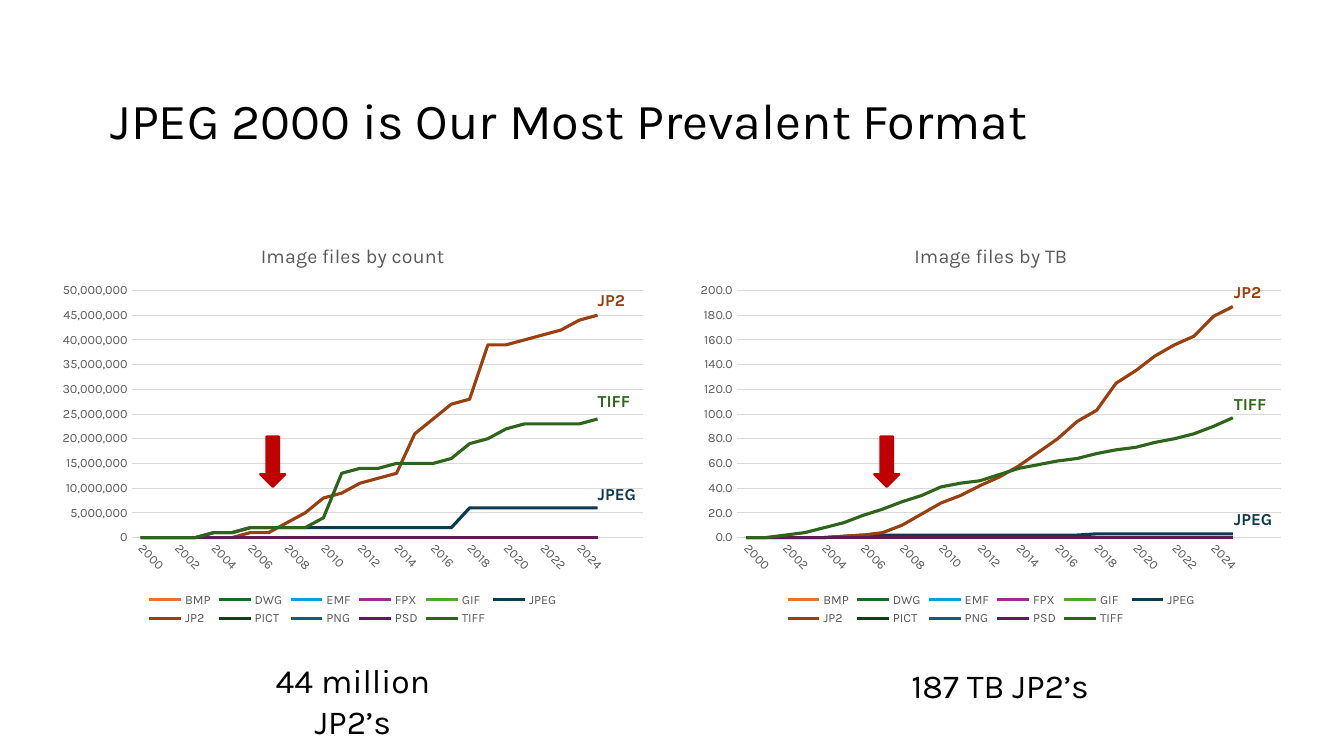
from lxml import etree
from pptx import Presentation
from pptx import util as u
from pptx.chart.data import CategoryChartData
from pptx.dml.color import RGBColor
from pptx.enum import chart as ch, shapes, text
from pptx.oxml.ns import qn

FONT = "Karla"
BLACK = RGBColor(0, 0, 0)
GRAY = RGBColor(0x59, 0x59, 0x59)
GRID = RGBColor(0xD9, 0xD9, 0xD9)
RED = RGBColor(0xC0, 0, 0)
COLORS = {
    "BMP": RGBColor(0xE9, 0x71, 0x32),
    "DWG": RGBColor(0x19, 0x6B, 0x24),
    "EMF": RGBColor(0x0F, 0x9E, 0xD5),
    "FPX": RGBColor(0xA0, 0x2B, 0x93),
    "GIF": RGBColor(0x4E, 0xA7, 0x2E),
    "JPEG": RGBColor(0x0D, 0x3A, 0x4E),
    "JP2": RGBColor(0x99, 0x40, 0x10),
    "PICT": RGBColor(0x0F, 0x40, 0x16),
    "PNG": RGBColor(0x09, 0x5F, 0x80),
    "PSD": RGBColor(0x60, 0x1A, 0x58),
    "TIFF": RGBColor(0x2F, 0x64, 0x1C),
}
YEARS = [str(year) for year in range(2000, 2026)]
MILLIONS = {
    "JPEG": [0] * 4 + [1] * 2 + [2] * 12 + [6] * 8,
    "JP2": [0, 0, 0, 0, 0, 0, 1, 1, 3, 5, 8, 9, 11, 12, 13, 21, 24, 27, 28,
            39, 39, 40, 41, 42, 44, 45],
    "TIFF": [0, 0, 0, 0, 1, 1, 2, 2, 2, 2, 4, 13, 14, 14, 15, 15, 15, 16, 19,
             20, 22, 23, 23, 23, 23, 24],
}
TERABYTES = {
    "JPEG": [0] * 5 + [1] + [2] * 12 + [3] * 8,
    "JP2": [0, 0, 0, 0, 0, 1, 2, 4, 10, 19, 28, 34, 42, 49, 58, 69, 80, 94,
            103, 125, 135, 147, 156, 163, 179, 187],
    "TIFF": [0, 0, 2, 4, 8, 12, 18, 23, 29, 34, 41, 44, 46, 51, 56, 59, 62,
             64, 68, 71, 73, 77, 80, 84, 90, 97],
}
CHARTS = [
    (0.5, "Image files by count", MILLIONS, 1000000, "#,##0", 50000000, 5000000),
    (6.83, "Image files by TB", TERABYTES, 1, "#,##0.0", 200, 20),
]

prs = Presentation()
prs.slide_width, prs.slide_height = u.Inches(13.33), u.Inches(7.5)
s = prs.slides.add_slide(prs.slide_layouts[6])


def style_font(font, size, color, bold=False):
    font.name, font.size, font.bold = FONT, u.Pt(size), bold
    font.color.rgb = color


def add_text(x, y, w, h, words, size, color, bold=False, align=None):
    tf = s.shapes.add_textbox(*map(u.Inches, (x, y, w, h))).text_frame
    tf.word_wrap = True
    tf.auto_size = text.MSO_AUTO_SIZE.SHAPE_TO_FIT_TEXT
    tf.text = words
    p = tf.paragraphs[0]
    p.alignment = align
    style_font(p.runs[0].font, size, color, bold)
    return p


for left, title, totals, unit, fmt, top_value, step in CHARTS:
    data = CategoryChartData(number_format=fmt)
    data.categories = YEARS + ["", ""]
    for name in COLORS:
        values = totals.get(name, [0] * len(YEARS))
        data.add_series(name, [v * unit for v in values] + [None, None])
    chart = s.shapes.add_chart(ch.XL_CHART_TYPE.LINE, u.Inches(left), u.Inches(2.25),
                               u.Inches(6), u.Inches(4), data).chart
    style_font(chart.font, 10, BLACK)
    chart.has_title = True
    chart.chart_title.text_frame.text = title
    chart.chart_title.include_in_layout = False
    style_font(chart.chart_title.text_frame.paragraphs[0].runs[0].font, 14, GRAY)
    chart.has_legend = True
    chart.legend.position = ch.XL_LEGEND_POSITION.BOTTOM
    chart.legend.include_in_layout = False
    style_font(chart.legend.font, 9, GRAY)
    chart.plots[0].vary_by_categories = False
    for series in chart.plots[0].series:
        series.smooth = False
        series.marker.style = ch.XL_MARKER_STYLE.NONE
        series.format.line.color.rgb = COLORS[series.name]
        series.format.line.width = u.Pt(2.25)

    years, amounts = chart.category_axis, chart.value_axis
    for axis in (years, amounts):
        axis.major_tick_mark = axis.minor_tick_mark = ch.XL_TICK_MARK.NONE
        style_font(axis.tick_labels.font, 9, GRAY)
    years.format.line.color.rgb = GRID
    years.format.line.width = u.Pt(0.75)
    years._element.find(qn("c:txPr")).find(qn("a:bodyPr")).set("rot", "2700000")
    skip = etree.Element(qn("c:tickLblSkip"), val="2")
    years._element.find(qn("c:noMultiLvlLbl")).addprevious(skip)
    amounts.minimum_scale, amounts.maximum_scale = 0, top_value
    amounts.major_unit = step
    amounts.format.line.fill.background()
    amounts.major_gridlines.format.line.color.rgb = GRID
    amounts.major_gridlines.format.line.width = u.Pt(0.75)
    amounts.tick_labels.number_format = fmt
    amounts.tick_labels.number_format_is_linked = False

for x, tops in ((5.83, (2.83, 3.83, 4.75)), (12.14, (2.75, 3.86, 5))):
    for name, y in zip(("JP2", "TIFF", "JPEG"), tops):
        add_text(x, y, 0.5 if name == "JP2" else 0.58, 0.3, name, 12, COLORS[name], True)

heading = add_text(1, 0.75, 11.33, 0.76, "JPEG 2000 is Our Most Prevalent Format", 36, BLACK)
heading.line_spacing = 1.15

for x in (2.58, 8.67):
    sp = s.shapes.add_shape(shapes.MSO_SHAPE.DOWN_ARROW, u.Inches(x), u.Inches(4.33),
                            u.Inches(0.25), u.Inches(0.5))
    sp.shadow.inherit = False
    sp.fill.solid()
    sp.fill.fore_color.rgb = sp.line.color.rgb = RED
    sp.line.width = u.Pt(1.5)

for x, y, words in ((2.25, 6.5, "44 million JP2’s"), (8.67, 6.55, "187 TB JP2’s")):
    add_text(x, y, 2.5, 0.5, words, 24, BLACK, align=text.PP_ALIGN.CENTER)

prs.save("out.pptx")
